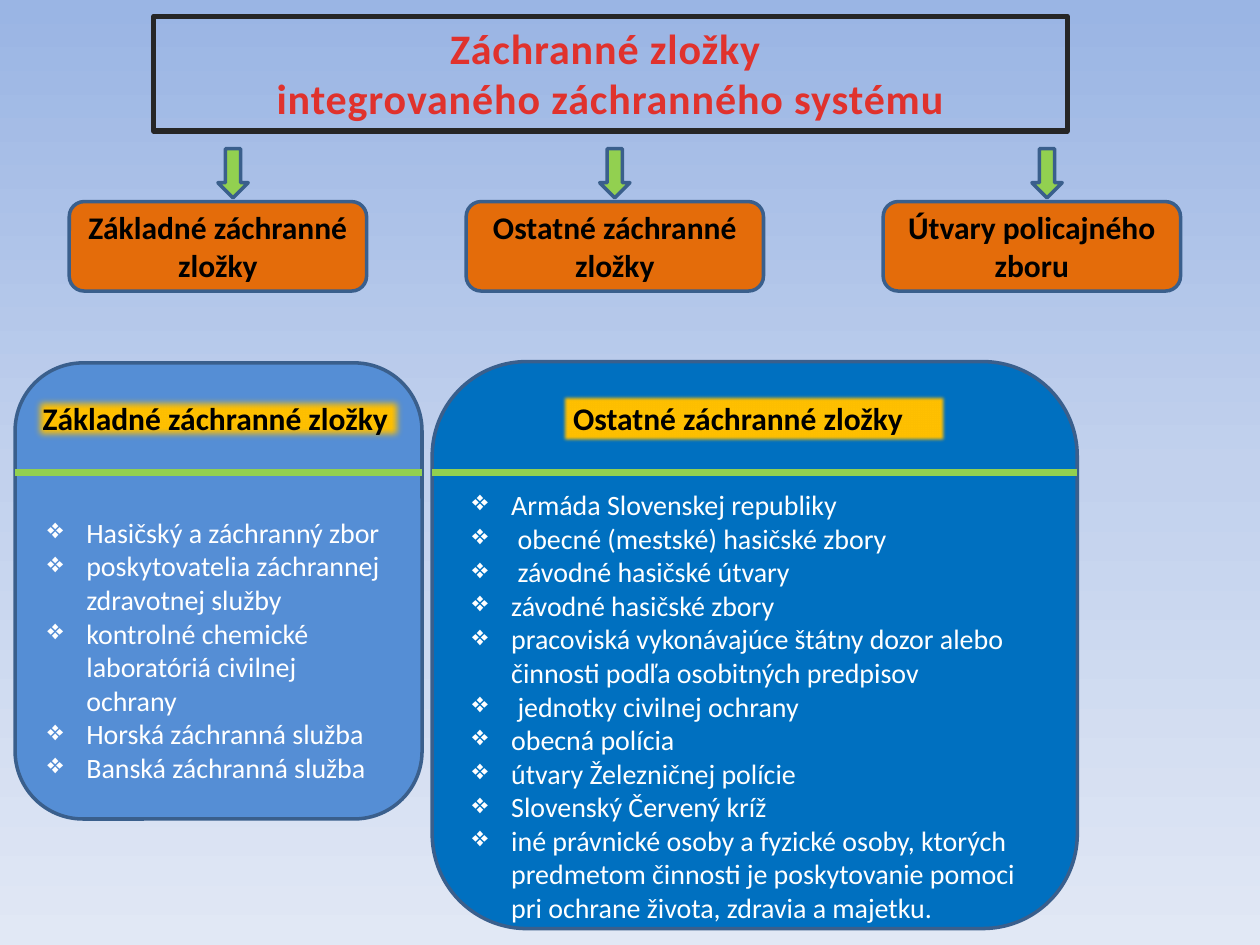
from lxml import etree
from pptx import Presentation
from pptx.dml.color import RGBColor
from pptx.enum.shapes import MSO_CONNECTOR, MSO_SHAPE
from pptx.enum.text import MSO_ANCHOR, PP_ALIGN
from pptx.oxml.ns import qn
from pptx.util import Emu, Inches, Pt

RECT, ROUND, ARROW = MSO_SHAPE.RECTANGLE, MSO_SHAPE.ROUNDED_RECTANGLE, MSO_SHAPE.DOWN_ARROW
STRAIGHT = MSO_CONNECTOR.STRAIGHT
TOP, MIDDLE = MSO_ANCHOR.TOP, MSO_ANCHOR.MIDDLE
LEFT, CENTER = PP_ALIGN.LEFT, PP_ALIGN.CENTER

EDGE, LIME, GOLD = "3A5F8C", "92D050", "FFC000"
SKY = [(0, "9AB5E4"), (50, "C2D1ED"), (100, "E1E8F5")]
TITLE = ["Záchranné zložky ", "integrovaného záchranného systému"]
GROUPS = [
    ("Základné záchranné zložky", 0.55, 1.73),
    ("Ostatné záchranné zložky", 3.7, 4.76),
    ("Útvary policajného zboru", 7.01, 8.19),
]
PANELS = [
    {
        "box": (0.12, 2.88, 3.23, 3.62), "fill": "558ED5", "start": 4.09,
        "head": "Základné záchranné zložky", "tag": (0.24, 3.12, 2.99, 0.4), "soft": 5,
        "items": [
            "Hasičský a záchranný zbor",
            "poskytovatelia záchrannej zdravotnej služby",
            "kontrolné chemické laboratóriá civilnej ochrany",
            "Horská záchranná služba",
            "Banská záchranná služba",
        ],
    },
    {
        "box": (3.43, 2.87, 5.12, 4.5), "fill": "0070C0", "start": 3.87,
        "head": "Ostatné záchranné zložky", "tag": (4.45, 3.12, 3.07, 0.4), "soft": 2.5,
        "items": [
            "Armáda Slovenskej republiky",
            " obecné (mestské) hasičské zbory",
            " závodné hasičské útvary",
            "závodné hasičské zbory",
            "pracoviská vykonávajúce štátny dozor alebo činnosti podľa osobitných predpisov",
            " jednotky civilnej ochrany",
            "obecná polícia",
            "útvary Železničnej polície",
            "Slovenský Červený kríž",
            "iné právnické osoby a fyzické osoby, ktorých predmetom činnosti je "
            "poskytovanie pomoci pri ochrane života, zdravia a majetku.",
        ],
    },
]
RULE = 3.75
INDENT = 0.31
CORNER = 0.1667 * 0.2929


def color(code):
    return RGBColor.from_string(code)


def add_box(kind, place, fill=None, line=None, width=2):
    box = slide.shapes.add_shape(kind, *map(Inches, place))
    box.shadow.inherit = False
    if fill:
        box.fill.solid()
        box.fill.fore_color.rgb = color(fill)
    else:
        box.fill.background()
    if line:
        box.line.color.rgb = color(line)
        box.line.width = Pt(width)
    else:
        box.line.fill.background()
    return box


def write(box, lines, size, ink, bold=True, align=CENTER, anchor=MIDDLE):
    frame = box.text_frame
    frame.word_wrap = True
    frame.vertical_anchor = anchor
    frame.text = "\n".join(lines)
    for para in frame.paragraphs:
        para.alignment = align
        for run in para.runs:
            font = run.font
            font.name, font.size, font.bold = "Calibri", Pt(size), bold
            font.color.rgb = color(ink)
    return frame


def add_bullet(para):
    props = para._p.get_or_add_pPr()
    props.set("marL", str(Inches(INDENT)))
    props.set("indent", str(-Inches(INDENT)))
    etree.SubElement(props, qn("a:buChar")).set("char", "❖")


def soften(box, points):
    effects = box._element.spPr.find(qn("a:effectLst"))
    etree.SubElement(effects, qn("a:softEdge")).set("rad", str(Emu(Pt(points))))


def paint_sky():
    fill = slide.background.fill
    fill.gradient()
    fill.gradient_angle = 270
    stops = slide._element.find(".//" + qn("a:gsLst"))
    for stop in list(stops):
        stops.remove(stop)
    for spot, code in SKY:
        stop = etree.SubElement(stops, qn("a:gs"))
        stop.set("pos", str(spot * 1000))
        etree.SubElement(stop, qn("a:srgbClr")).set("val", code)


def add_panel(panel):
    left, top, width, height = panel["box"]
    box = add_box(ROUND, panel["box"], panel["fill"], EDGE)
    frame = write(box, panel["items"], 16, "FFFFFF", False, LEFT, TOP)
    frame.margin_top = Inches(panel["start"] - top - CORNER * min(width, height))
    frame.margin_bottom = 0
    for para in frame.paragraphs:
        add_bullet(para)
    tag = add_box(RECT, panel["tag"], GOLD)
    soften(tag, panel["soft"])
    write(tag, [panel["head"]], 18, "000000", align=LEFT).word_wrap = False
    rule = slide.shapes.add_connector(
        STRAIGHT, Inches(left), Inches(RULE), Inches(left + width), Inches(RULE))
    rule.line.color.rgb = color(LIME)
    rule.line.width = Pt(3.75)
    etree.SubElement(rule._element.spPr, qn("a:effectLst"))


deck = Presentation()
deck.slide_width, deck.slide_height = Inches(10), Inches(7.5)
slide = deck.slides.add_slide(deck.slide_layouts[6])
paint_sky()

title = add_box(RECT, (1.22, 0.13, 7.25, 0.91), line="262626", width=3)
for para in write(title, TITLE, 24, "E0322D", anchor=TOP).paragraphs:
    for run in para.runs:
        run.font._element.set("spc", "50")

for name, left, tip in GROUPS:
    box = add_box(ROUND, (left, 1.6, 2.36, 0.71), "E46C0A", EDGE)
    write(box, [name], 18, "000000")
    add_box(ARROW, (tip, 1.18, 0.24, 0.39), LIME, EDGE)

for panel in PANELS:
    add_panel(panel)

deck.save("out.pptx")
